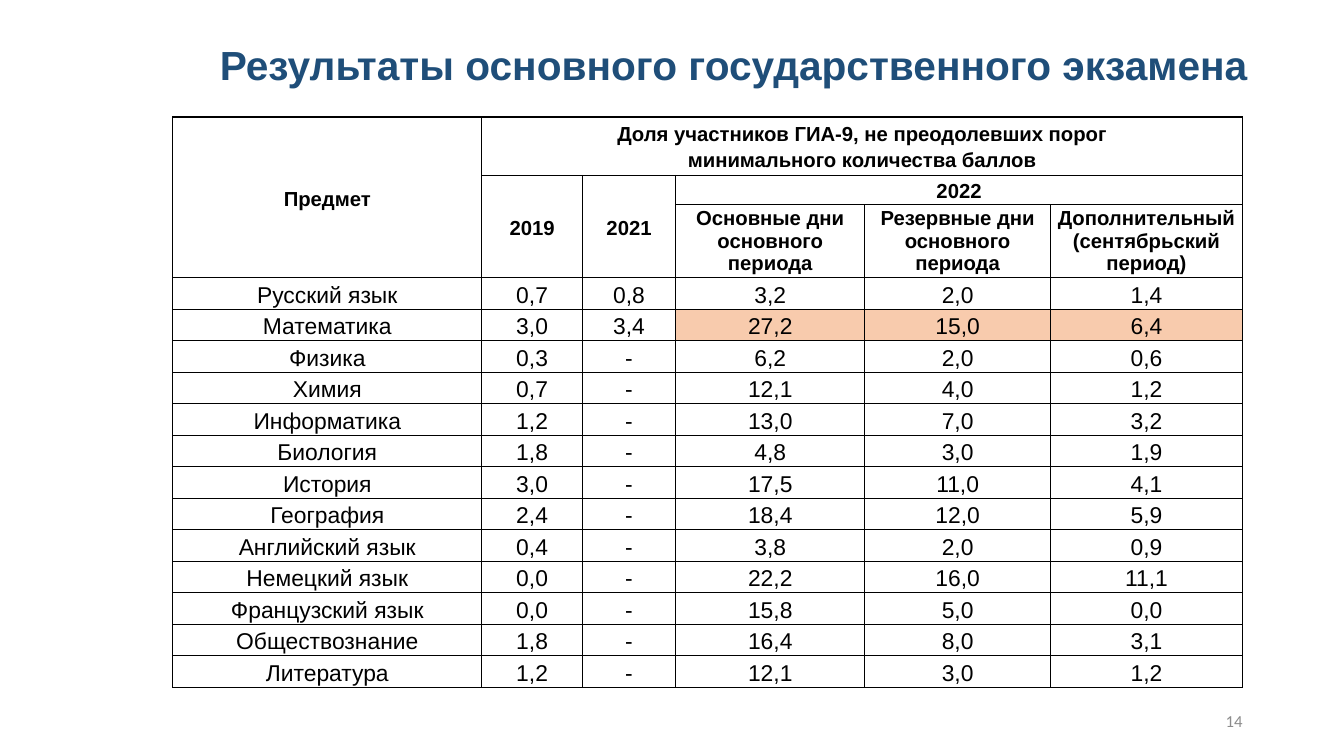
from lxml import etree
from pptx import Presentation
from pptx.dml.color import RGBColor
from pptx.enum.text import MSO_ANCHOR, MSO_AUTO_SIZE, PP_ALIGN
from pptx.oxml.ns import qn
from pptx.util import Inches, Pt

CENTER, RIGHT = PP_ALIGN.CENTER, PP_ALIGN.RIGHT
TOP, MIDDLE = MSO_ANCHOR.TOP, MSO_ANCHOR.MIDDLE
NO_AUTOFIT = MSO_AUTO_SIZE.NONE

BLACK = RGBColor(0x00, 0x00, 0x00)
WHITE = RGBColor(0xFF, 0xFF, 0xFF)
NAVY = RGBColor(0x1F, 0x4E, 0x79)
GRAY = RGBColor(0x8C, 0x8C, 0x8C)
PEACH = RGBColor(0xF8, 0xCB, 0xAD)

TITLE_FONT = {"name": "Arial", "size": Pt(32), "bold": True}
HEADER_FONT = {"name": "Arial", "size": Pt(16), "bold": True}
BODY_FONT = {"name": "Arial", "size": Pt(18), "bold": False}
NUMBER_FONT = {"name": "Calibri", "size": Pt(13.2), "bold": False}

COLUMN_WIDTHS = [3.38, 1.1, 1.02, 2.07, 2.03, 2.1]
HEADER_HEIGHTS = [0.64, 0.32, 0.8]
TABLE_HEIGHT = 6.24

# Header cells: row, column, rows spanned, columns spanned, text, line spacing
HEADERS = [
    (0, 0, 3, 1, "Предмет", 1.15),
    (0, 1, 1, 5, "Доля участников ГИА-9, не преодолевших порог\n"
                 "минимального количества баллов", 1.15),
    (1, 1, 2, 1, "2019", 1.15),
    (1, 2, 2, 1, "2021", 1.15),
    (1, 3, 1, 3, "2022", 1.15),
    (2, 3, 1, 1, "Основные дни основного периода", 1.0),
    (2, 4, 1, 1, "Резервные дни основного периода", 1.0),
    (2, 5, 1, 1, "Дополнительный (сентябрьский период)", 1.0),
]

RESULTS = [
    ("Русский язык", "0,7", "0,8", "3,2", "2,0", "1,4"),
    ("Математика", "3,0", "3,4", "27,2", "15,0", "6,4"),
    ("Физика", "0,3", "-", "6,2", "2,0", "0,6"),
    ("Химия", "0,7", "-", "12,1", "4,0", "1,2"),
    ("Информатика", "1,2", "-", "13,0", "7,0", "3,2"),
    ("Биология", "1,8", "-", "4,8", "3,0", "1,9"),
    ("История", "3,0", "-", "17,5", "11,0", "4,1"),
    ("География", "2,4", "-", "18,4", "12,0", "5,9"),
    ("Английский язык", "0,4", "-", "3,8", "2,0", "0,9"),
    ("Немецкий язык", "0,0", "-", "22,2", "16,0", "11,1"),
    ("Французский язык", "0,0", "-", "15,8", "5,0", "0,0"),
    ("Обществознание", "1,8", "-", "16,4", "8,0", "3,1"),
    ("Литература", "1,2", "-", "12,1", "3,0", "1,2"),
]


def set_attributes(target, values):
    for name, value in values.items():
        setattr(target, name, value)


def write_text(tf, text, font, color, align, spacing=1.0):
    tf.text = text
    for p in tf.paragraphs:
        p.alignment = align
        p.line_spacing = spacing
        for r in p.runs:
            set_attributes(r.font, font)
            r.font.color.rgb = color


def place(sp, left, top, width, height):
    box = zip(("left", "top", "width", "height"), (left, top, width, height))
    set_attributes(sp, {name: Inches(value) for name, value in box})


def add_borders(cell):
    tc_pr = cell._tc.get_or_add_tcPr()
    for side in ("a:lnL", "a:lnR", "a:lnT", "a:lnB"):
        ln = etree.SubElement(tc_pr, qn(side), w=str(Pt(1)))
        fill = etree.SubElement(ln, qn("a:solidFill"))
        etree.SubElement(fill, qn("a:srgbClr"), val=str(BLACK))


def style_cell(cell):
    add_borders(cell)
    cell.fill.solid()
    cell.fill.fore_color.rgb = WHITE
    set_attributes(cell, {
        "vertical_anchor": MIDDLE,
        "margin_left": Inches(0.07), "margin_right": Inches(0.07),
        "margin_top": 0, "margin_bottom": 0,
    })


def add_title(s):
    sp = s.shapes.title
    place(sp, 2.26, 0.39, 11.54, 0.64)
    tf = sp.text_frame
    set_attributes(tf, {"word_wrap": False, "auto_size": NO_AUTOFIT,
                        "vertical_anchor": TOP})
    write_text(tf, "Результаты основного государственного экзамена",
               TITLE_FONT, NAVY, CENTER)


def add_results_table(s):
    first_row = len(HEADER_HEIGHTS)
    row_count = first_row + len(RESULTS)
    table = s.shapes.add_table(
        row_count, len(COLUMN_WIDTHS), Inches(1.89), Inches(1.28),
        Inches(sum(COLUMN_WIDTHS)), Inches(TABLE_HEIGHT)).table
    set_attributes(table, {"first_row": False, "horz_banding": False})

    # Grid
    result_height = (TABLE_HEIGHT - sum(HEADER_HEIGHTS)) / len(RESULTS)
    heights = HEADER_HEIGHTS + [result_height] * len(RESULTS)
    for column, width in zip(table.columns, COLUMN_WIDTHS):
        column.width = Inches(width)
    for row, height in zip(table.rows, heights):
        row.height = Inches(height)
    for cell in table.iter_cells():
        style_cell(cell)

    # Header
    for row, col, rows, cols, text, spacing in HEADERS:
        cell = table.cell(row, col)
        if rows * cols > 1:
            cell.merge(table.cell(row + rows - 1, col + cols - 1))
        write_text(cell.text_frame, text, HEADER_FONT, BLACK, CENTER, spacing)

    # Results, with the 2022 mathematics shares highlighted
    for row, values in enumerate(RESULTS, first_row):
        for col, text in enumerate(values):
            cell = table.cell(row, col)
            write_text(cell.text_frame, text, BODY_FONT, BLACK, CENTER, 1.15)
            if values[0] == "Математика" and col >= 3:
                cell.fill.fore_color.rgb = PEACH


def add_page_number(s):
    sp = s.shapes.add_textbox(Inches(10.38), Inches(7.66),
                              Inches(3.31), Inches(0.44))
    tf = sp.text_frame
    set_attributes(tf, {"word_wrap": True, "vertical_anchor": MIDDLE})
    write_text(tf, "14", NUMBER_FONT, GRAY, RIGHT)


def main():
    prs = Presentation()
    prs.slide_width, prs.slide_height = Inches(14.7), Inches(8.27)
    s = prs.slides.add_slide(prs.slide_layouts.get_by_name("Title Only"))
    add_title(s)
    add_results_table(s)
    add_page_number(s)
    prs.save("out.pptx")


if __name__ == "__main__":
    main()
